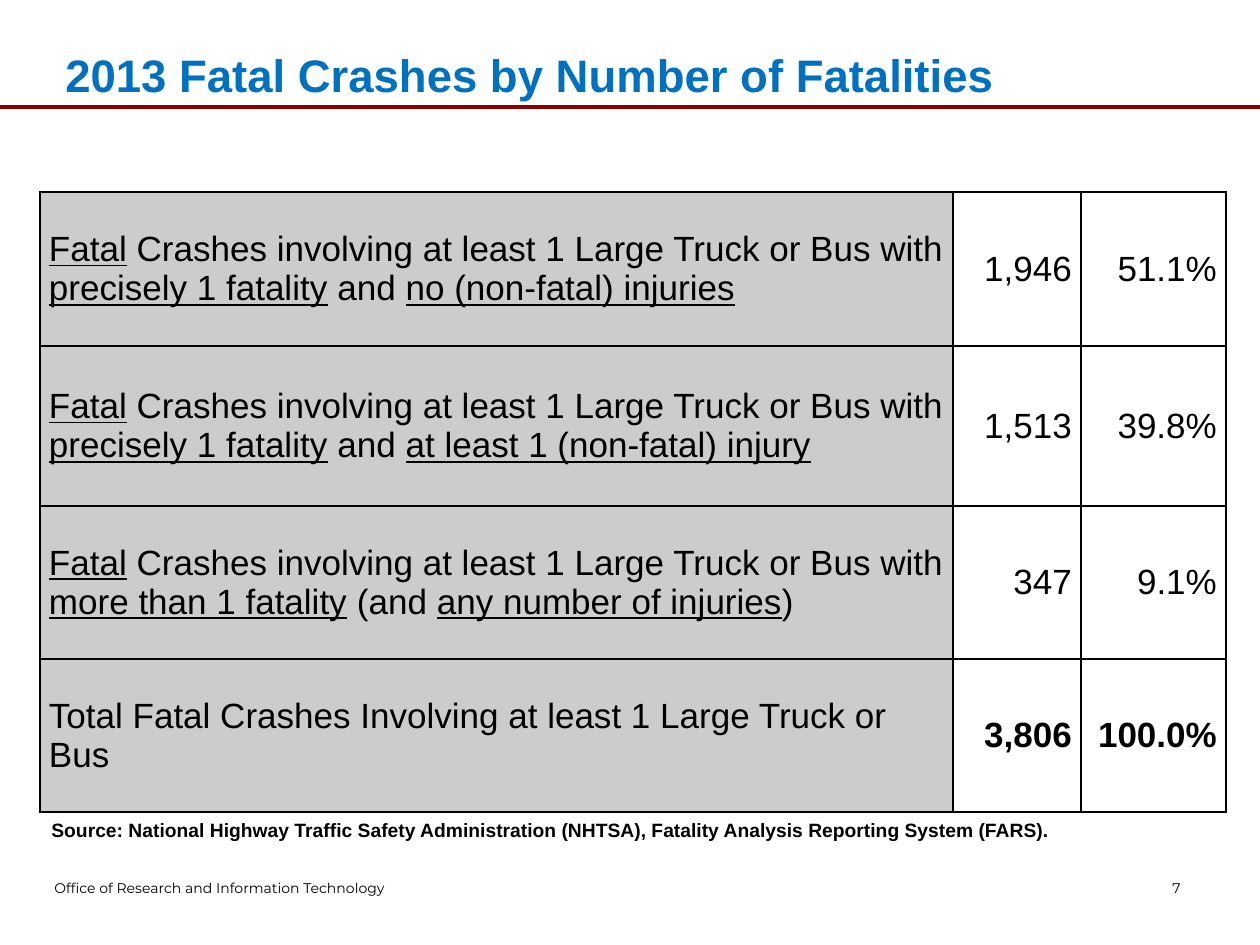
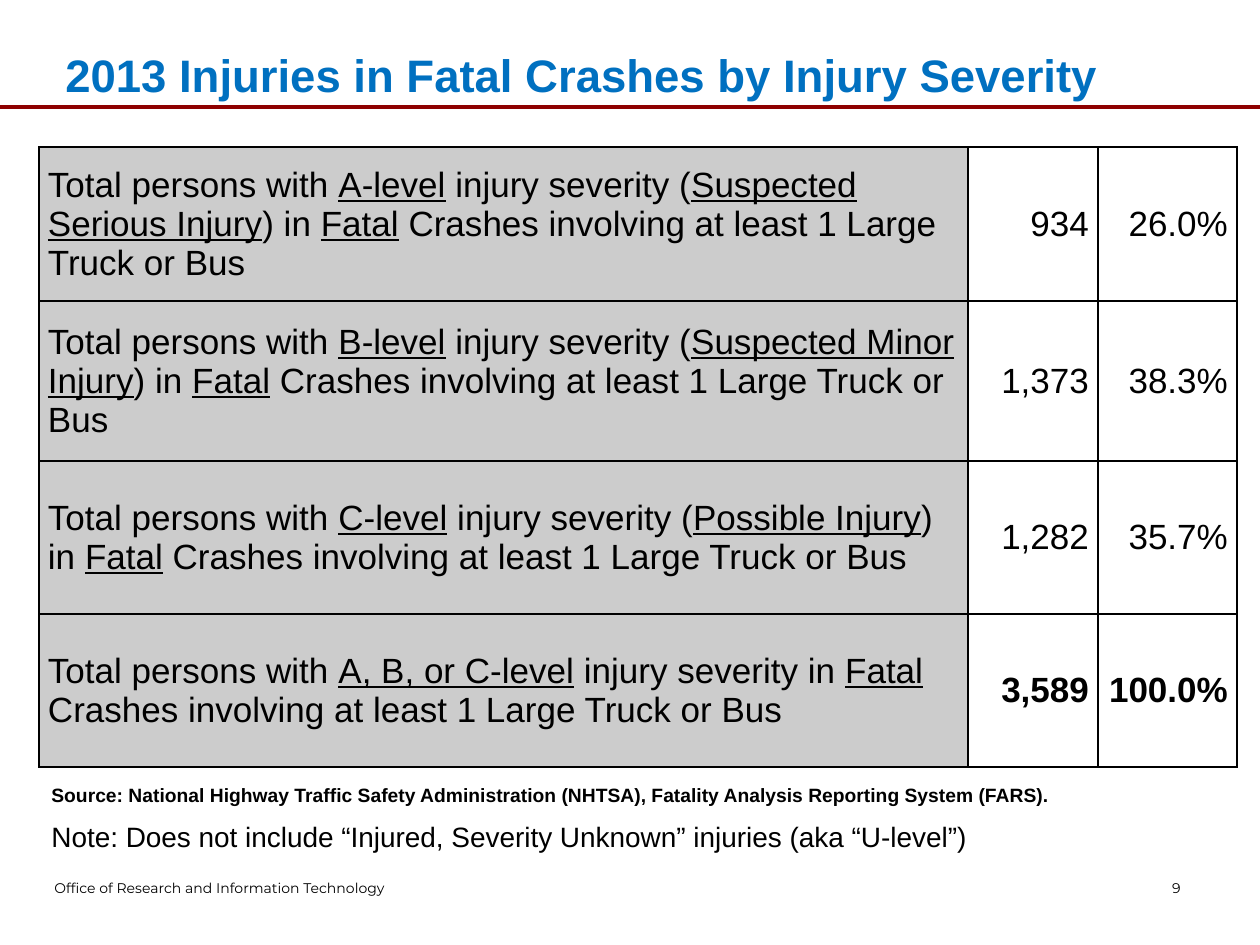
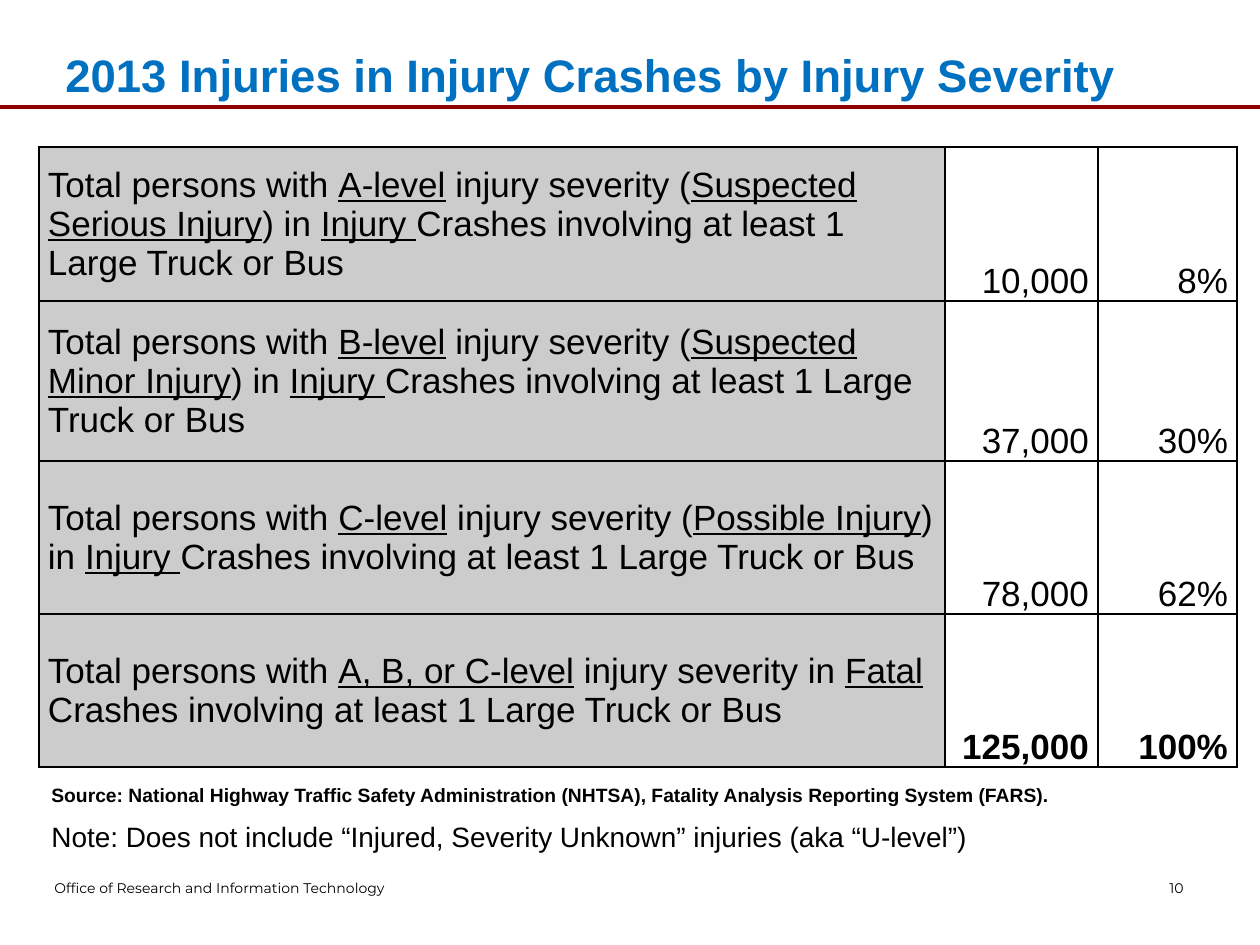
from lxml import etree
from pptx import Presentation
from pptx.dml.color import RGBColor
from pptx.enum.shapes import MSO_SHAPE
from pptx.enum.text import MSO_ANCHOR, PP_ALIGN
from pptx.oxml.ns import qn
from pptx.util import Emu, Pt

TOP, MIDDLE, BOTTOM = MSO_ANCHOR.TOP, MSO_ANCHOR.MIDDLE, MSO_ANCHOR.BOTTOM
LEFT, CENTER, RIGHT = PP_ALIGN.LEFT, PP_ALIGN.CENTER, PP_ALIGN.RIGHT
RECTANGLE = MSO_SHAPE.RECTANGLE

# Shared look and wording
PX = 914400 / 126
BLACK, BLUE, RED, GRAY = "000000", "0070C0", "8E0000", "CCCCCC"
BODY_FONT, FOOTER_FONT = "Arial", "Montserrat"
OFFICE = "Office of Research and Information Technology"
SOURCE = ("Source: National Highway Traffic Safety Administration (NHTSA), "
          "Fatality Analysis Reporting System (FARS).")
NOTE = "Note: Does not include “Injured, Severity Unknown” injuries (aka “U-level”)"
ROW_HEIGHTS = [154, 160, 153, 153]
CELL_MARGIN = 9

# Row labels; underscores enclose underlined words
TRUCK_OR_BUS = "Crashes involving at least 1 Large Truck or Bus"
CRASH_LABELS = [f"_Fatal_ {TRUCK_OR_BUS} with {detail}" for detail in (
    "_precisely 1 fatality_ and _no (non-fatal) injuries_",
    "_precisely 1 fatality_ and _at least 1 (non-fatal) injury_",
    "_more than 1 fatality_ (and _any number of injuries_)")]
CRASH_LABELS.append("Total Fatal Crashes Involving at least 1 Large Truck or Bus")
SEVERITIES = [("A", "Suspected Serious Injury"),
              ("B", "Suspected Minor Injury"),
              ("C", "Possible Injury")]
ALL_LEVELS = (f"Total persons with _A, B, or C-level_ injury severity in "
              f"_Fatal_ {TRUCK_OR_BUS}")
fatal_labels, injury_labels = [
    [f"Total persons with _{level}-level_ injury severity (_{meaning}_) in "
     f"{crash_type}{TRUCK_OR_BUS}" for level, meaning in SEVERITIES] + [ALL_LEVELS]
    for crash_type in ("_Fatal_ ", "_Injury _")]

SLIDES = [
    dict(number=7, title="2013 Fatal Crashes by Number of Fatalities",
         corner=(40, 192), columns=[913, 128, 145], labels=CRASH_LABELS,
         counts=["1,946", "1,513", "347", "3,806"],
         shares=["51.1%", "39.8%", "9.1%", "100.0%"],
         anchor=MIDDLE, source_top=812, note=None),
    dict(number=9, title="2013 Injuries in Fatal Crashes by Injury Severity",
         corner=(39, 147), columns=[929, 130, 139], labels=fatal_labels,
         counts=["934", "1,373", "1,282", "3,589"],
         shares=["26.0%", "38.3%", "35.7%", "100.0%"],
         anchor=MIDDLE, source_top=777, note=NOTE),
    dict(number=10, title="2013 Injuries in Injury Crashes by Injury Severity",
         corner=(39, 147), columns=[906, 153, 139], labels=injury_labels,
         counts=["10,000", "37,000", "78,000", "125,000"],
         shares=["8%", "30%", "62%", "100%"],
         anchor=BOTTOM, source_top=777, note=NOTE),
]


def px(*lengths):
    return [Emu(round(length * PX)) for length in lengths]


def write(frame, text, size, font=BODY_FONT, color=BLACK, bold=False,
          align=LEFT, anchor=TOP):
    """Fill a text frame, underlining what stands between underscores."""
    frame.word_wrap = True
    frame.vertical_anchor = anchor
    paragraph = frame.paragraphs[0]
    paragraph.alignment = align
    for index, part in enumerate(text.split("_")):
        if part:
            run = paragraph.add_run()
            run.text = part
            if index % 2:
                run.font.underline = True
    paragraph.font.name = font
    paragraph.font.size = Pt(size)
    paragraph.font.bold = bold
    paragraph.font.color.rgb = RGBColor.from_string(color)


prs = Presentation()
prs.slide_width, prs.slide_height = px(1260, 945)

for content in SLIDES:
    slide = prs.slides.add_slide(prs.slide_layouts[6])
    shapes = slide.shapes

    # Footer and page number
    page_number = shapes.add_textbox(*px(1124, 873, 105, 30))
    write(page_number.text_frame, str(content["number"]), 8, FOOTER_FONT, align=CENTER)
    office = shapes.add_textbox(*px(42, 873, 693, 30))
    write(office.text_frame, OFFICE, 8, FOOTER_FONT, anchor=MIDDLE)

    # Title and the rule below it
    rule = shapes.add_shape(RECTANGLE, *px(-1, 105, 1261, 4))
    rule.shadow.inherit = False
    rule.fill.solid()
    rule.fill.fore_color.rgb = RGBColor.from_string(RED)
    rule.line.fill.background()
    title = shapes.add_textbox(*px(53, 40, 1187, 68))
    write(title.text_frame, content["title"], 26, color=BLUE, bold=True, anchor=MIDDLE)

    # Table of counts and shares
    columns = content["columns"]
    table = shapes.add_table(4, 3, *px(*content["corner"], sum(columns),
                                       sum(ROW_HEIGHTS))).table
    table.first_row = table.horz_banding = False
    for column, width in zip(table.columns, px(*columns)):
        column.width = width
    for row, height in zip(table.rows, px(*ROW_HEIGHTS)):
        row.height = height
    rows = zip(content["labels"], content["counts"], content["shares"])
    for r, values in enumerate(rows):
        for c, value in enumerate(values):
            cell = table.cell(r, c)
            is_label = c == 0
            write(cell.text_frame, value, 20, bold=r == 3 and not is_label,
                  align=LEFT if is_label else RIGHT)
            cell.vertical_anchor = MIDDLE if is_label else content["anchor"]
            cell.margin_left, cell.margin_right = px(CELL_MARGIN, CELL_MARGIN)
            cell.margin_top = cell.margin_bottom = 0
            properties = cell._tc.get_or_add_tcPr()
            for side in ("lnL", "lnR", "lnT", "lnB"):
                border = etree.SubElement(properties, qn(f"a:{side}"), w=str(Pt(1)))
                paint = etree.SubElement(border, qn("a:solidFill"))
                etree.SubElement(paint, qn("a:srgbClr"), val=BLACK)
            if is_label:
                cell.fill.solid()
                cell.fill.fore_color.rgb = RGBColor.from_string(GRAY)
            else:
                cell.fill.background()

    # Source and note
    source = shapes.add_textbox(*px(39, content["source_top"], 1176, 36))
    write(source.text_frame, SOURCE, 11, bold=True)
    if content["note"]:
        note = shapes.add_textbox(*px(39, 813, 1126, 47))
        write(note.text_frame, content["note"], 16)

prs.save("out.pptx")
